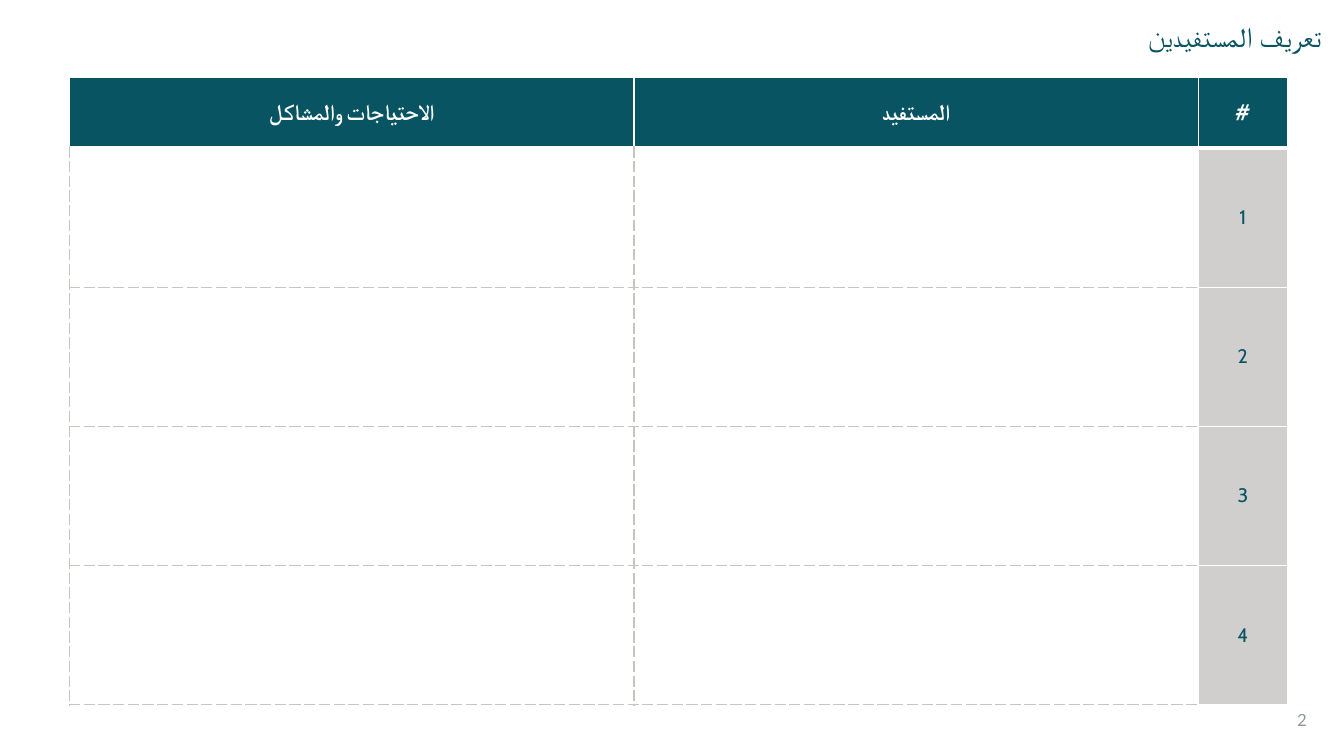
from dataclasses import dataclass

from lxml.etree import SubElement
from pptx import Presentation
from pptx.dml.color import RGBColor
from pptx.enum.text import MSO_ANCHOR, PP_ALIGN
from pptx.oxml.ns import qn
from pptx.table import _Cell
from pptx.text.text import TextFrame
from pptx.util import Pt

TEAL, WHITE, GREY, DASH, SLATE = "095463", "FFFFFF", "D0CFCD", "C9C4C0", "8C999F"
LEFT, TOP = 49.68, 55.44
WIDTHS = (403.2, 403.2, 63.36)
HEAD, ROW = 50.4, 99.36
TITLE = "تعريف المستفيدين"
HEADERS = ("الاحتياجات والمشاكل", "المستفيد", "#")
COUNT = 4


@dataclass(frozen=True)
class Style:
    face: str
    size: float
    color: str
    align: PP_ALIGN
    bold: bool = False
    before: float = 0


@dataclass(frozen=True)
class Line:
    color: str
    width: float = 1
    dash: str = "solid"


HEADING = Style("Lato", 20, TEAL, PP_ALIGN.RIGHT)
FOLIO = Style("Lato", 12, SLATE, PP_ALIGN.LEFT)
HEADER = Style("Cabin", 16, WHITE, PP_ALIGN.CENTER, bold=True, before=12)
NUMBER = Style("Cabin", 14, TEAL, PP_ALIGN.CENTER, before=12)
THIN, THICK, DASHED = Line(WHITE), Line(WHITE, 3), Line(DASH, 1, "dash")


def rgb(code: str) -> RGBColor:
    return RGBColor.from_string(code)


def write(frame: TextFrame, text: str, style: Style) -> None:
    """Fill the frame with one right-to-left paragraph."""
    frame.text = text
    para = frame.paragraphs[0]
    para.alignment = style.align
    para.space_before = Pt(style.before)
    font = para.font
    font.name, font.size, font.bold = style.face, Pt(style.size), style.bold
    font.color.rgb = rgb(style.color)
    props = para._p.get_or_add_pPr()
    props.set("rtl", "1")
    # Arabic letters take the complex-script face
    SubElement(props.find(qn("a:defRPr")), qn("a:cs"), typeface=style.face)


def paint(cell: _Cell, fill: str, left: Line, right: Line, top: Line, base: Line) -> None:
    """Set the borders of a cell, then its fill."""
    props = cell._tc.get_or_add_tcPr()
    for side, line in zip("LRTB", (left, right, top, base)):
        edge = SubElement(props, qn(f"a:ln{side}"), w=str(Pt(line.width)))
        solid = SubElement(edge, qn("a:solidFill"))
        SubElement(solid, qn("a:srgbClr"), val=line.color)
        SubElement(edge, qn("a:prstDash"), val=line.dash)
    cell.fill.solid()
    cell.fill.fore_color.rgb = rgb(fill)


def label(cell: _Cell, text: str, style: Style) -> None:
    write(cell.text_frame, text, style)
    cell.vertical_anchor = MSO_ANCHOR.MIDDLE


def main() -> None:
    deck = Presentation()
    deck.slide_width, deck.slide_height = Pt(960), Pt(540)
    slide = deck.slides.add_slide(deck.slide_layouts[5])

    title = slide.shapes.title
    title.left, title.top = Pt(LEFT), Pt(10.08)
    title.width, title.height = Pt(901.44), Pt(44.64)
    title.text_frame.vertical_anchor = MSO_ANCHOR.TOP
    write(title.text_frame, TITLE, HEADING)

    folio = slide.shapes.add_textbox(Pt(919.44), Pt(503.28), Pt(31.68), Pt(28.8))
    folio.text_frame.word_wrap = True
    write(folio.text_frame, "2", FOLIO)

    table = slide.shapes.add_table(
        COUNT + 1, len(WIDTHS), Pt(LEFT), Pt(TOP),
        Pt(sum(WIDTHS)), Pt(HEAD + COUNT * ROW),
    ).table
    table.horz_banding = False
    for column, width in zip(table.columns, WIDTHS):
        column.width = Pt(width)

    table.rows[0].height = Pt(HEAD)
    for col, text in enumerate(HEADERS):
        cell = table.cell(0, col)
        paint(cell, TEAL, THIN, THIN, THIN, THICK)
        label(cell, text, HEADER)

    for row in range(1, COUNT + 1):
        table.rows[row].height = Pt(ROW)
        needs, person, number = table.rows[row].cells
        first = row == 1
        top = THICK if first else DASHED
        paint(needs, WHITE, DASHED, DASHED, top, DASHED)
        paint(person, WHITE, DASHED, THIN, top, DASHED)
        paint(number, GREY, THIN, THIN, THICK if first else THIN, THIN)
        label(number, str(row), NUMBER)

    deck.save("out.pptx")


if __name__ == "__main__":
    main()
